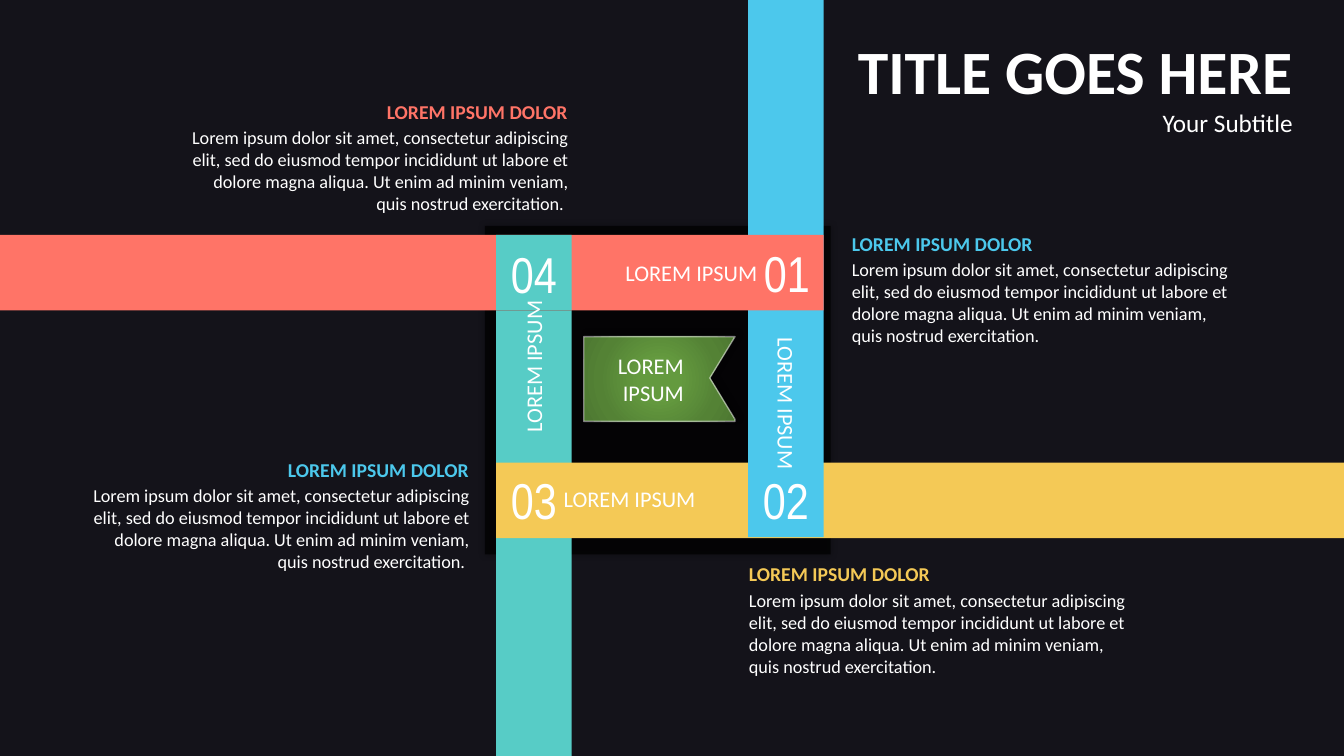
from dataclasses import dataclass

import pptx
import pptx.dml.color
import pptx.enum.shapes
import pptx.enum.text
import pptx.oxml
import pptx.oxml.ns
import pptx.util

Inches = pptx.util.Inches
Pt = pptx.util.Pt
RGBColor = pptx.dml.color.RGBColor
qn = pptx.oxml.ns.qn
LEFT = pptx.enum.text.PP_ALIGN.LEFT
CENTER = pptx.enum.text.PP_ALIGN.CENTER
RIGHT = pptx.enum.text.PP_ALIGN.RIGHT

BACKGROUND = RGBColor(0x14, 0x13, 0x1A)
BLACK = RGBColor(0, 0, 0)
WHITE = RGBColor(255, 255, 255)
TEAL = RGBColor(0x57, 0xCC, 0xC6)
YELLOW = RGBColor(0xF4, 0xC9, 0x56)
BLUE = RGBColor(0x4C, 0xC8, 0xEC)
RED = RGBColor(0xFF, 0x74, 0x67)
GREENS = ((0, RGBColor(0x64, 0x9A, 0x3F)), (23, RGBColor(0x64, 0x9A, 0x3F)),
          (69, RGBColor(0x54, 0x82, 0x35)), (97, RGBColor(0x4E, 0x79, 0x32)))

SLIDE_W, SLIDE_H = 13.33, 7.5
BAND = 0.75
COL_LEFT, COL_RIGHT = 4.92, 7.42
ROW_TOP, ROW_BOTTOM = 2.33, 4.59
HEADING = "LOREM IPSUM DOLOR"
BODY = ("Lorem ipsum dolor sit amet, consectetur adipiscing elit, sed do eiusmod "
        "tempor incididunt ut labore et dolore magna aliqua. Ut enim ad minim "
        "veniam, quis nostrud exercitation.")


@dataclass
class Bar:
    x: float
    y: float
    w: float
    h: float
    color: RGBColor


@dataclass
class Line:
    text: str
    size: float
    color: RGBColor = WHITE
    bold: bool = False
    font: str = "Calibri"
    before: float = 0


@dataclass
class Label:
    x: float
    y: float
    align: int
    rotation: float = 0


@dataclass
class Note:
    x: float
    y: float
    color: RGBColor
    align: int


BARS = [
    Bar(COL_LEFT, 3.08, BAND, SLIDE_H - 3.08, TEAL),
    Bar(COL_LEFT, ROW_BOTTOM, SLIDE_W - COL_LEFT, BAND, YELLOW),
    Bar(COL_RIGHT, 0, BAND, 5.33, BLUE),
    Bar(0, ROW_TOP, COL_RIGHT + BAND, BAND, RED),
    Bar(COL_LEFT, ROW_TOP, BAND, BAND, TEAL),
]
NUMBERS = {"01": (7.43, 2.37), "02": (7.42, 4.62), "03": (4.92, 4.62), "04": (4.92, 2.38)}
LABELS = [
    Label(5.93, 2.54, RIGHT),
    Label(5.52, 4.78, LEFT),
    Label(4.47, 3.57, RIGHT, 270),
    Label(6.97, 3.73, RIGHT, 90),
]
NOTES = [
    Note(8.35, 2.25, BLUE, LEFT),
    Note(7.33, 5.53, YELLOW, LEFT),
    Note(0.78, 4.49, BLUE, RIGHT),
    Note(1.76, 0.94, RED, RIGHT),
]


def set_alpha(fill_parent, percent: int) -> None:
    """Make the solid colour under fill_parent partly transparent."""
    color = fill_parent.find(qn("a:solidFill"))[0]
    color.append(pptx.oxml.parse_xml(
        f'<a:alpha {pptx.oxml.ns.nsdecls("a")} val="{percent * 1000}"/>'))


def add_shadow(sp, blur: float, dist: float, angle: int) -> None:
    sp.shadow.inherit = False
    sp._element.spPr.find(qn("a:effectLst")).append(pptx.oxml.parse_xml(
        f'<a:outerShdw {pptx.oxml.ns.nsdecls("a")} blurRad="{Pt(blur)}" dist="{Pt(dist)}" '
        f'dir="{angle * 60000}" algn="ctr" rotWithShape="0">'
        '<a:srgbClr val="000000"><a:alpha val="40000"/></a:srgbClr></a:outerShdw>'))


def add_bar(slide, bar: Bar):
    sp = slide.shapes.add_shape(
        pptx.enum.shapes.MSO_SHAPE.RECTANGLE,
        Inches(bar.x), Inches(bar.y), Inches(bar.w), Inches(bar.h))
    sp.fill.solid()
    sp.fill.fore_color.rgb = bar.color
    sp.line.fill.background()
    sp.shadow.inherit = False
    return sp


def add_flag(slide) -> None:
    points = [(5.79, 3.34), (7.29, 3.34), (7.04, 3.75), (7.29, 4.16), (7.29, 4.18), (5.79, 4.18)]
    corners = [(Inches(x), Inches(y)) for x, y in points]
    builder = slide.shapes.build_freeform(*corners[0])
    builder.add_line_segments(corners[1:], close=True)
    sp = builder.convert_to_shape()
    sp.fill.solid()
    sp.line.color.rgb = WHITE
    sp.line.width = Pt(1)
    spPr = sp._element.spPr
    set_alpha(spPr.find(qn("a:ln")), 50)
    stops = "".join(f'<a:gs pos="{pos * 1000}"><a:srgbClr val="{color}"/></a:gs>'
                    for pos, color in GREENS)
    spPr.replace(spPr.find(qn("a:solidFill")), pptx.oxml.parse_xml(
        f'<a:gradFill {pptx.oxml.ns.nsdecls("a")} rotWithShape="1"><a:gsLst>{stops}</a:gsLst>'
        '<a:path path="circle"><a:fillToRect l="50000" t="50000" r="50000" b="50000"/>'
        '</a:path></a:gradFill>'))
    add_shadow(sp, 4, 3, 315)


def add_text(slide, x: float, y: float, w: float, h: float, lines: list[Line],
             align: int, tight: bool = True, rotation: float = 0) -> None:
    """Add a text box with one paragraph per line; tight means narrow margins."""
    sp = slide.shapes.add_textbox(Inches(x), Inches(y), Inches(w), Inches(h))
    sp.rotation = rotation
    tf = sp.text_frame
    tf.word_wrap = True
    tf.auto_size = pptx.enum.text.MSO_AUTO_SIZE.SHAPE_TO_FIT_TEXT
    if tight:
        tf.margin_left = tf.margin_right = Inches(0.07)
        tf.margin_top = tf.margin_bottom = Inches(0.03)
    for i, line in enumerate(lines):
        p = tf.add_paragraph() if i else tf.paragraphs[0]
        p.alignment = align
        if line.before:
            p.space_before = Pt(line.before)
        r = p.add_run()
        r.text = line.text
        r.font.name = line.font
        r.font.size = Pt(line.size)
        r.font.bold = line.bold
        r.font.color.rgb = line.color


def main() -> None:
    prs = pptx.Presentation()
    prs.slide_width, prs.slide_height = Inches(SLIDE_W), Inches(SLIDE_H)
    slide = prs.slides.add_slide(prs.slide_layouts[6])
    slide.background.fill.solid()
    slide.background.fill.fore_color.rgb = BACKGROUND

    panel = add_bar(slide, Bar(4.81, 2.24, 3.43, 3.26, BLACK))
    set_alpha(panel._element.spPr, 70)
    add_shadow(panel, 5, 0, 0)
    for bar in BARS:
        add_bar(slide, bar)
    for number, (x, y) in NUMBERS.items():
        add_text(slide, x, y, BAND, 0.67, [Line(number, 36, font="Arial Narrow")], CENTER)
    add_flag(slide)
    for label in LABELS:
        add_text(slide, label.x, label.y, 1.65, 0.34, [Line("LOREM IPSUM", 16)],
                 label.align, rotation=label.rotation)
    add_text(slide, 5.96, 3.46, 1.04, 0.61, [Line("LOREM ", 16), Line("IPSUM", 16)], CENTER)
    add_text(slide, 6.9, 0.28, 6.02, 1.14,
             [Line("TITLE GOES HERE", 44, bold=True), Line("Your Subtitle", 18)],
             RIGHT, tight=False)
    for note in NOTES:
        body = BODY + " " if note.align == RIGHT else BODY
        add_text(slide, note.x, note.y, 3.97, 1.25,
                 [Line(HEADING, 14, note.color, bold=True), Line(body, 13, before=2.4)],
                 note.align, tight=False)
    prs.save("out.pptx")


if __name__ == "__main__":
    main()
